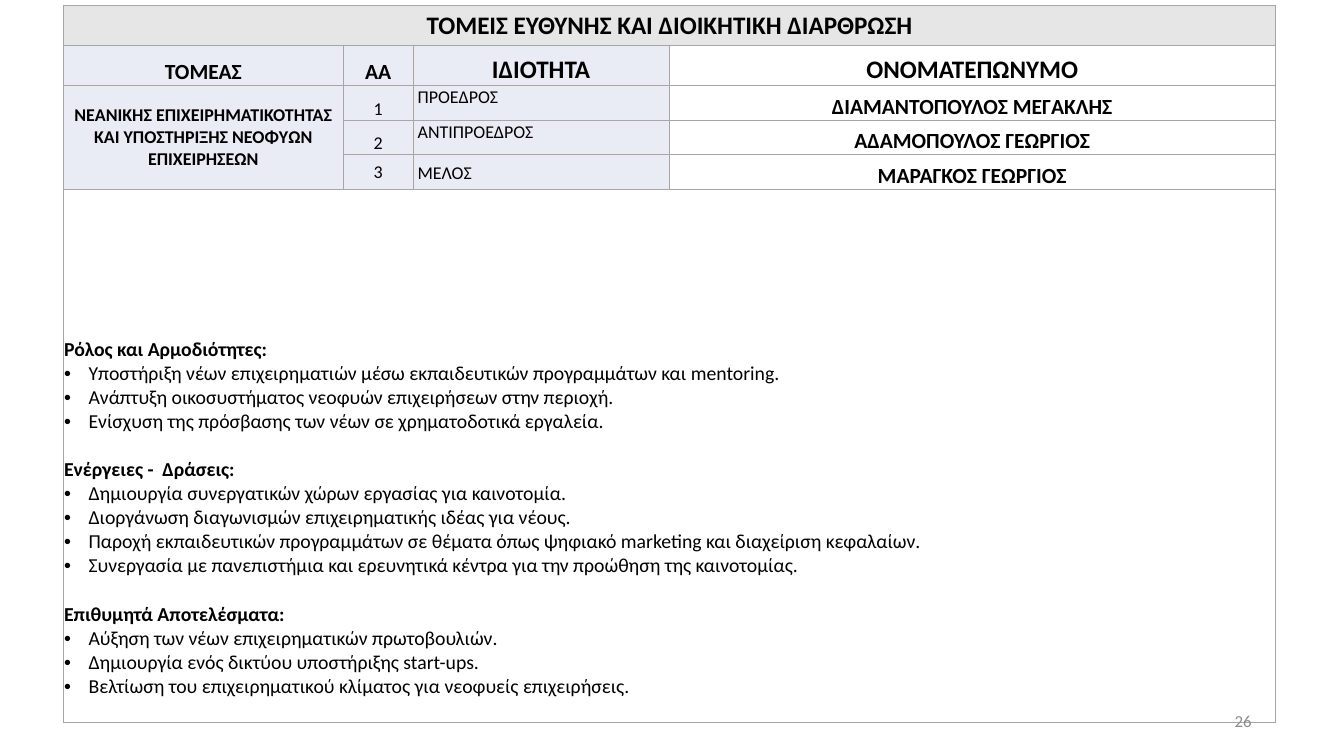
from pptx import Presentation, util as u
from pptx.dml.color import RGBColor
from pptx.enum import text as t
from pptx.oxml.ns import qn
from lxml import etree

LEFT, MID, RIGHT = t.PP_ALIGN.LEFT, t.PP_ALIGN.CENTER, t.PP_ALIGN.RIGHT
TOP, CENTRE, BASE = t.MSO_ANCHOR.TOP, t.MSO_ANCHOR.MIDDLE, t.MSO_ANCHOR.BOTTOM
GREY, BLUE, WHITE, EDGE = "E7E6E6", "E9EBF5", "FFFFFF", "A6A6A6"
COLS = [11, 2.74, 10.06, 23.82]
ROWS = [1.57, 1.57, 1.37, 1.37, 1.37, 20.93]

TITLE = "ΤΟΜΕΙΣ ΕΥΘΥΝΗΣ ΚΑΙ ΔΙΟΙΚΗΤΙΚΉ ΔΙΑΡΘΡΩΣΗ"
HEADS = [("ΤΟΜΕΑΣ", 24), ("ΑΑ", 24), ("ΙΔΙΟΤΗΤΑ", 28), ("ΟΝΟΜΑΤΕΠΩΝΥΜΟ", 28)]
SECTOR = "ΝΕΑΝΙΚΗΣ ΕΠΙΧΕΙΡΗΜΑΤΙΚΟΤΗΤΑΣ ΚΑΙ ΥΠΟΣΤΗΡΙΞΗΣ ΝΕΟΦΥΩΝ ΕΠΙΧΕΙΡΗΣΕΩΝ"
PEOPLE = [("ΠΡΟΕΔΡΟΣ", "ΔΙΑΜΑΝΤΟΠΟΥΛΟΣ ΜΕΓΑΚΛΗΣ"),
          ("ΑΝΤΙΠΡΟΕΔΡΟΣ", "ΑΔΑΜΟΠΟΥΛΟΣ ΓΕΩΡΓΙΟΣ"),
          ("ΜΕΛΟΣ", "ΜΑΡΑΓΚΟΣ ΓΕΩΡΓΙΟΣ")]
PLAN = {
    "Ρόλος και Αρμοδιότητες:": [
        "Υποστήριξη νέων επιχειρηματιών μέσω εκπαιδευτικών προγραμμάτων και mentoring.",
        "Ανάπτυξη οικοσυστήματος νεοφυών επιχειρήσεων στην περιοχή.",
        "Ενίσχυση της πρόσβασης των νέων σε χρηματοδοτικά εργαλεία."],
    "Ενέργειες -  Δράσεις:": [
        "Δημιουργία συνεργατικών χώρων εργασίας για καινοτομία.",
        "Διοργάνωση διαγωνισμών επιχειρηματικής ιδέας για νέους.",
        "Παροχή εκπαιδευτικών προγραμμάτων σε θέματα όπως ψηφιακό marketing και διαχείριση κεφαλαίων.",
        "Συνεργασία με πανεπιστήμια και ερευνητικά κέντρα για την προώθηση της καινοτομίας."],
    "Επιθυμητά Αποτελέσματα:": [
        "Αύξηση των νέων επιχειρηματικών πρωτοβουλιών.",
        "Δημιουργία ενός δικτύου υποστήριξης start-ups.",
        "Βελτίωση του επιχειρηματικού κλίματος για νεοφυείς επιχειρήσεις."],
}


def rgb(code):
    return RGBColor.from_string(code)


def write(para, words, size=20, bold=False, color="000000", align=MID,
          before=0, after=0, line=None, bullet=False):
    para.alignment = align
    para.space_before, para.space_after = u.Pt(before), u.Pt(after)
    if line:
        para.line_spacing = line
    run = para.add_run()
    run.text = words
    font = run.font
    font.name, font.size, font.bold = "Calibri", u.Pt(size), bold
    font.color.rgb = rgb(color)
    if bullet:
        props = para._p.get_or_add_pPr()
        props.set("marL", str(u.Cm(0.96)))
        props.set("indent", str(-u.Cm(0.96)))
        etree.SubElement(props, qn("a:buFont")).set("typeface", "Arial")
        etree.SubElement(props, qn("a:buChar")).set("char", "•")


def border(cell):
    props = cell._tc.get_or_add_tcPr()
    for spot, side in enumerate(("lnL", "lnR", "lnT", "lnB")):
        line = etree.Element(qn("a:" + side), w=str(u.Pt(1)))
        fill = etree.SubElement(line, qn("a:solidFill"))
        etree.SubElement(fill, qn("a:srgbClr")).set("val", EDGE)
        props.insert(spot, line)


def style(cell, fill, anchor=BASE, side=0.03, top=0.03, foot=0):
    cell.fill.solid()
    cell.fill.fore_color.rgb = rgb(fill)
    cell.vertical_anchor = anchor
    cell.margin_left = cell.margin_right = u.Cm(side)
    cell.margin_top, cell.margin_bottom = u.Cm(top), u.Cm(foot)
    return cell.text_frame.paragraphs[0]


def add_plan(cell):
    para = style(cell, WHITE, foot=0.95)
    for nth, (head, items) in enumerate(PLAN.items()):
        if nth:
            para = cell.text_frame.add_paragraph()
        # One line of space parts the sections
        write(para, head, size=22, bold=True, align=LEFT, before=27 if nth else 0)
        for item in items:
            write(cell.text_frame.add_paragraph(), item, size=22, align=LEFT, bullet=True)


def add_grid(slide, left, top):
    grid = slide.shapes.add_table(len(ROWS), len(COLS), u.Cm(left), u.Cm(top),
                                  u.Cm(sum(COLS)), u.Cm(sum(ROWS))).table
    grid.first_row = grid.horz_banding = False
    for col, wide in zip(grid.columns, COLS):
        col.width = u.Cm(wide)
    for row, high in zip(grid.rows, ROWS):
        row.height = u.Cm(high)

    # Merged areas
    last = len(ROWS) - 1
    grid.cell(0, 0).merge(grid.cell(0, 3))
    grid.cell(2, 0).merge(grid.cell(4, 0))
    grid.cell(last, 0).merge(grid.cell(last, 3))

    # Title and column heads
    write(style(grid.cell(0, 0), GREY, CENTRE), TITLE, size=28, bold=True)
    for col, (head, size) in enumerate(HEADS):
        fill = WHITE if col == 3 else BLUE
        write(style(grid.cell(1, col), fill), head, size=size, bold=True)

    # Sector and its members
    write(style(grid.cell(2, 0), BLUE, CENTRE), SECTOR, bold=True)
    for nth, (role, name) in enumerate(PEOPLE, 1):
        row, end = nth + 1, nth == len(PEOPLE)
        write(style(grid.cell(row, 1), BLUE, CENTRE if end else BASE), str(nth))
        write(style(grid.cell(row, 2), BLUE, CENTRE if end else TOP, side=0.18, top=0),
              role, align=LEFT, after=8, line=1.07)
        write(style(grid.cell(row, 3), WHITE), name, size=24, bold=True)

    add_plan(grid.cell(last, 0))
    for cell in grid.iter_cells():
        border(cell)


def add_page(slide, left, top, wide, high):
    frame = slide.shapes.add_textbox(*map(u.Cm, (left, top, wide, high))).text_frame
    frame.word_wrap = True
    frame.vertical_anchor = CENTRE
    frame.margin_left = frame.margin_right = frame.margin_top = frame.margin_bottom = 0
    write(frame.paragraphs[0], "26", size=18.7, color="8C8C8C", align=RIGHT)


def main():
    deck = Presentation()
    deck.slide_width, deck.slide_height = u.Cm(52.81), u.Cm(29.69)
    slide = deck.slides.add_slide(deck.slide_layouts[6])
    add_grid(slide, 2.49, 0.2)
    add_page(slide, 37.29, 27.53, 11.89, 1.57)
    deck.save("out.pptx")


if __name__ == "__main__":
    main()
